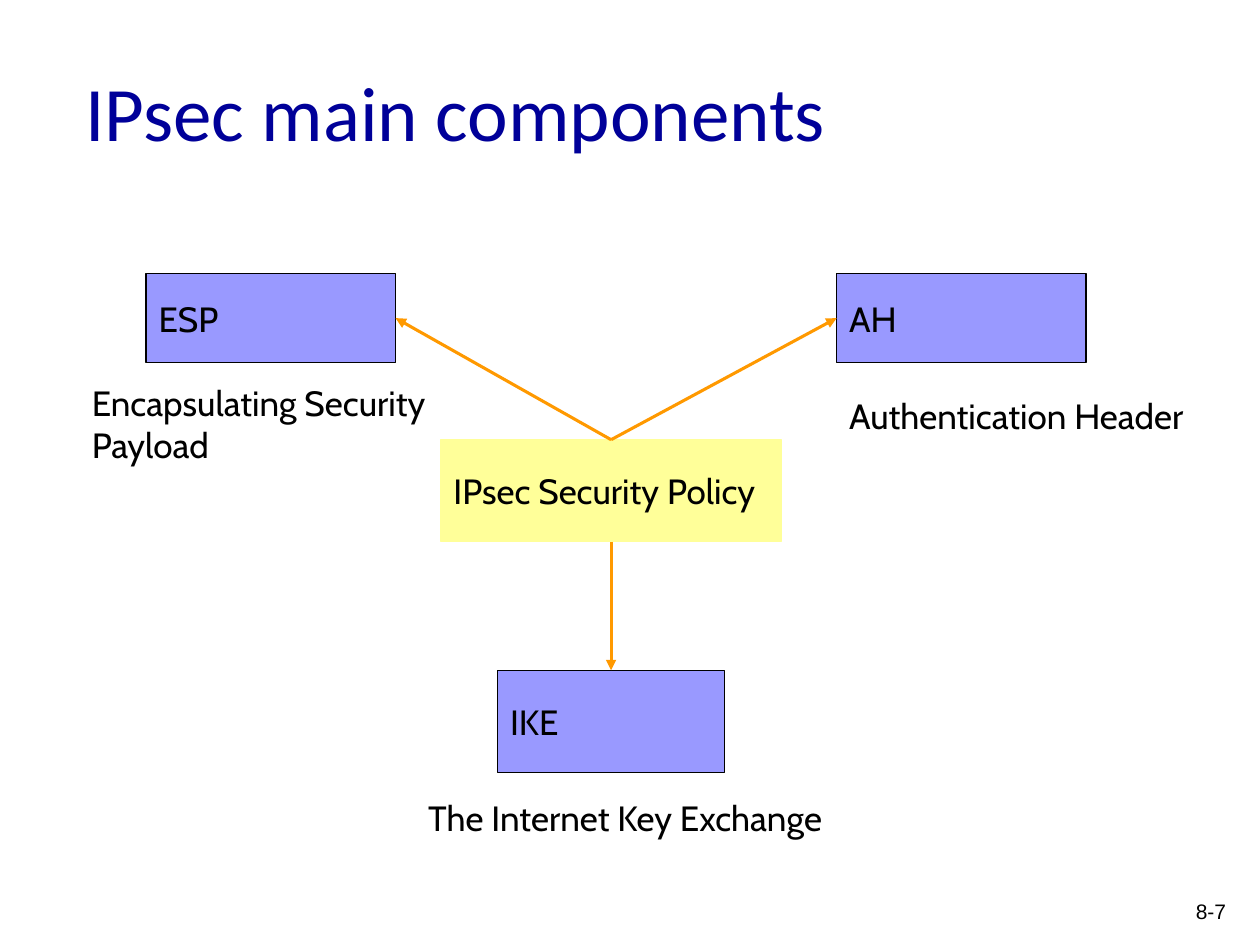
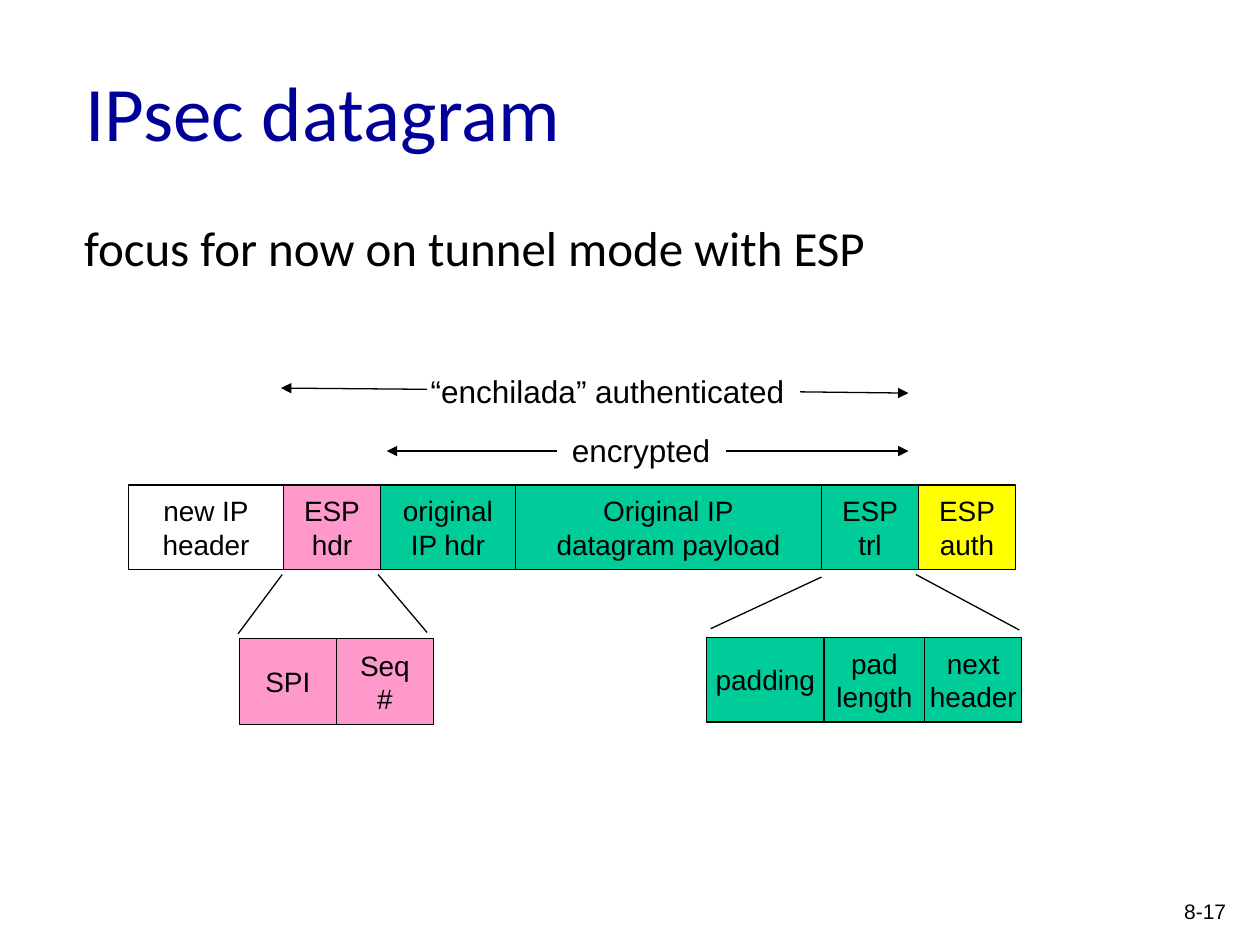
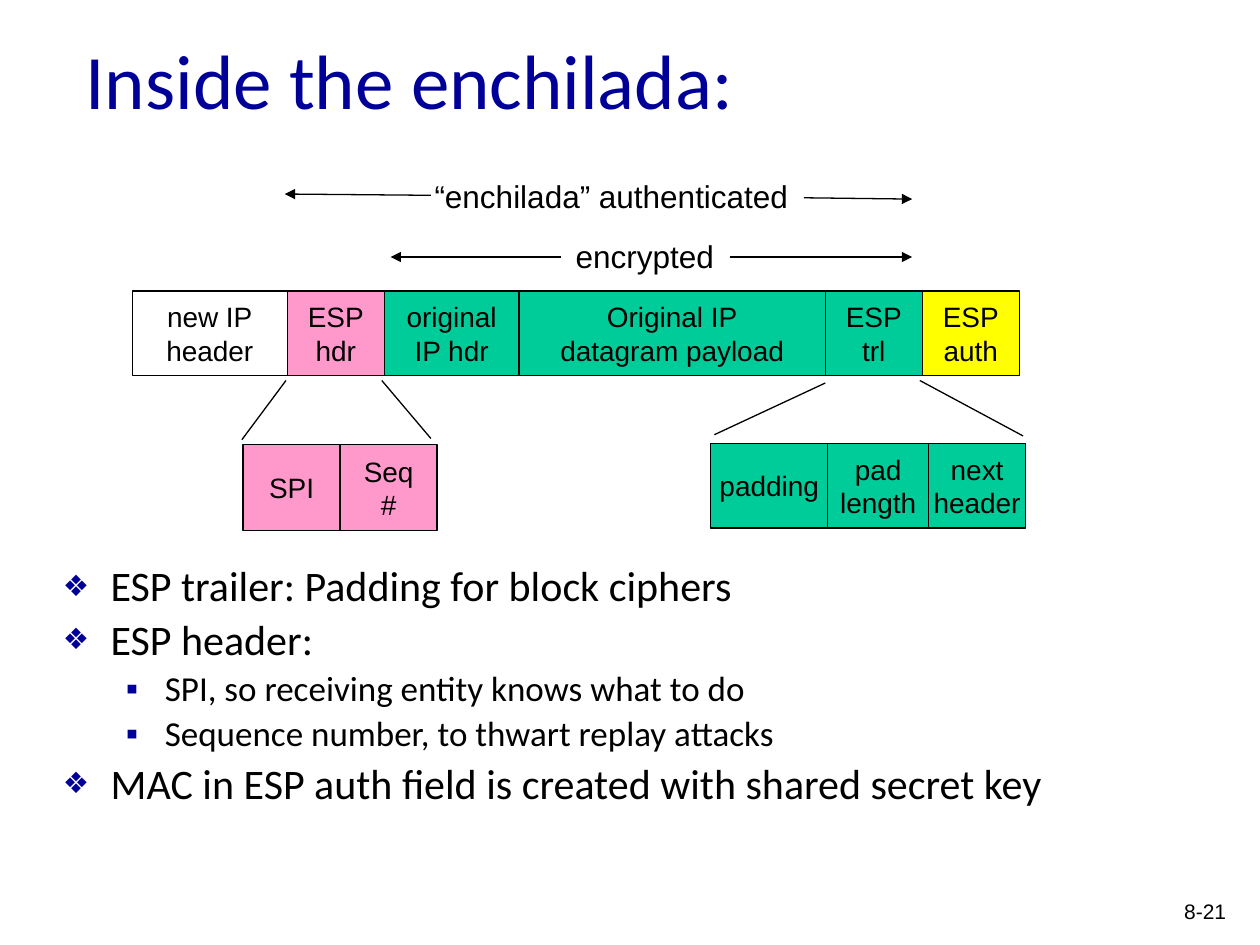
from lxml import etree
from pptx import Presentation
from pptx.dml.color import RGBColor
from pptx.enum.shapes import MSO_CONNECTOR, MSO_SHAPE
from pptx.enum.text import MSO_ANCHOR, MSO_AUTO_SIZE, PP_ALIGN
from pptx.oxml.ns import qn
from pptx.util import Inches, Pt

# Shared style
BLACK = RGBColor(0x00, 0x00, 0x00)
NAVY = RGBColor(0x00, 0x00, 0x99)
LAVENDER = RGBColor(0x99, 0x99, 0xFF)
CREAM = RGBColor(0xFF, 0xFF, 0x99)
ORANGE = RGBColor(0xFF, 0x99, 0x00)
PINK = RGBColor(0xFF, 0x99, 0xCC)
GREEN = RGBColor(0x00, 0xCC, 0x99)
YELLOW = RGBColor(0xFF, 0xFF, 0x00)
TITLE_FONT, DIAGRAM_FONT, COMPONENT_FONT = "Calibri", "Arial", "Cabin"
TITLE_ONLY = 5

# Components: text, (left, top, width, height)
POLICY = ("IPsec Security Policy", (3.5, 3.49, 2.7, 0.81))
COMPONENTS = {
    "ESP": (1.16, 2.17, 1.98, 0.71),
    "AH": (6.64, 2.17, 1.98, 0.71),
    "IKE": (3.95, 5.32, 1.8, 0.81),
}
COMPONENT_NAMES = [
    ("Encapsulating Security\nPayload", (0.63, 2.98, 3.22, 0.94)),
    ("Authentication Header", (6.64, 3.08, 3.19, 0.53)),
    ("The Internet Key Exchange", (3.3, 6.27, 3.84, 0.53)),
]

# Datagram, measured from the top left corner of its main row
# Rows: left, top, height, then (text, width, fill) for each field
FIELD_ROWS = [
    (0, 0, 0.67, [
        ("new IP\nheader", 1.23, None), ("ESP\nhdr", 0.77, PINK),
        ("original\nIP hdr", 1.07, GREEN),
        ("Original IP\ndatagram payload", 2.43, GREEN),
        ("ESP\ntrl", 0.77, GREEN), ("ESP\nauth", 0.77, YELLOW)]),
    (4.59, 1.21, 0.67, [
        ("padding", 0.93, GREEN), ("pad\nlength", 0.8, GREEN),
        ("next\nheader", 0.77, GREEN)]),
    (0.88, 1.22, 0.68, [("SPI", 0.77, PINK), ("Seq\n#", 0.77, PINK)]),
]
SPAN_LABELS = [
    ("encrypted", (3.42, -0.48, 1.3, 0.4)),
    ("“enchilada” authenticated", (2.3, -0.95, 3.01, 0.4)),
]
SPAN_ARROWS = [
    ((4.74, -0.27), (6.19, -0.27)), ((3.4, -0.27), (2.05, -0.27)),
    ((5.33, -0.74), (6.19, -0.73)), ((2.37, -0.76), (1.21, -0.77)),
]
ZOOM_LINES = [
    ((4.62, 1.14), (5.5, 0.73)), ((7.07, 1.15), (6.25, 0.71)),
    ((0.87, 1.18), (1.22, 0.71)), ((1.98, 0.71), (2.37, 1.17)),
]

# Body text: (level, text); level None has no bullet
FOCUS = [(None, "focus for now on tunnel mode with ESP")]
ENCHILADA = [
    (0, "ESP trailer: Padding for block ciphers"),
    (0, "ESP header:"),
    (1, "SPI, so receiving entity knows what to do"),
    (1, "Sequence number, to thwart replay attacks"),
    (0, "MAC in ESP auth field is created with shared secret key"),
]
# Level: size, line spacing, left margin, hanging indent, bullet, bullet percent
LEVELS = {
    None: (28, 1.0, 0.38, 0.38, None, None),
    0: (24, 0.9, 0.38, 0.38, "❖", 70),
    1: (20, 0.9, 0.81, 0.31, "▪", 100),
}


def inches(lengths):
    return [Inches(length) for length in lengths]


def shifted(origin, place):
    """Move a point or a box by the origin."""
    return (origin[0] + place[0], origin[1] + place[1], *place[2:])


def add_run(paragraph, text, font, size, color=BLACK):
    run = paragraph.add_run()
    run.text = text
    run.font.name, run.font.size, run.font.color.rgb = font, Pt(size), color


def write(frame, text, font, size, color=BLACK, align=PP_ALIGN.LEFT,
          anchor=MSO_ANCHOR.TOP, wrap=False):
    frame.auto_size = MSO_AUTO_SIZE.NONE
    frame.word_wrap, frame.vertical_anchor = wrap, anchor
    for index, line in enumerate(text.split("\n")):
        paragraph = frame.add_paragraph() if index else frame.paragraphs[0]
        paragraph.alignment = align
        add_run(paragraph, line, font, size, color)


def add_label(slide, text, box, font, size, **style):
    label = slide.shapes.add_textbox(*inches(box))
    write(label.text_frame, text, font, size, **style)


def add_box(slide, text, box, fill, font, size, line=BLACK, align=PP_ALIGN.LEFT):
    shape = slide.shapes.add_shape(MSO_SHAPE.RECTANGLE, *inches(box))
    shape.shadow.inherit = False
    if fill is None:
        shape.fill.background()
    else:
        shape.fill.solid()
        shape.fill.fore_color.rgb = fill
    shape.line.color.rgb, shape.line.width = line, Pt(0.75)
    write(shape.text_frame, text, font, size, align=align, anchor=MSO_ANCHOR.MIDDLE)


def add_line(slide, start, end, color=BLACK, width=0.75, arrow=False):
    connector = slide.shapes.add_connector(
        MSO_CONNECTOR.STRAIGHT, *inches(start), *inches(end))
    connector.line.color.rgb, connector.line.width = color, Pt(width)
    if arrow:
        etree.SubElement(connector.line._get_or_add_ln(), qn("a:tailEnd"), type="triangle")
    etree.SubElement(connector._element.spPr, qn("a:effectLst"))


def add_body(slide, box, entries):
    frame = slide.shapes.add_textbox(*inches(box)).text_frame
    frame.word_wrap = True
    for index, (level, text) in enumerate(entries):
        size, spacing, margin, hanging, bullet, percent = LEVELS[level]
        paragraph = frame.add_paragraph() if index else frame.paragraphs[0]
        paragraph.level = level or 0
        paragraph.line_spacing, paragraph.space_before = spacing, Pt(size * 0.2)
        add_run(paragraph, text, TITLE_FONT, size)
        properties = paragraph._p.get_or_add_pPr()
        properties.set("marL", str(Inches(margin)))
        properties.set("indent", str(-Inches(hanging)))
        if bullet:
            color = etree.SubElement(properties, qn("a:buClr"))
            etree.SubElement(color, qn("a:srgbClr"), val=str(NAVY))
            etree.SubElement(properties, qn("a:buSzPct"), val=str(percent * 1000))
            etree.SubElement(properties, qn("a:buFont"), typeface=DIAGRAM_FONT)
            etree.SubElement(properties, qn("a:buChar"), char=bullet)


def add_slide(presentation, title, number, title_top=0.25):
    slide = presentation.slides.add_slide(presentation.slide_layouts[TITLE_ONLY])
    heading = slide.shapes.title
    heading.left, heading.top, heading.width, heading.height = inches(
        (0.58, title_top, 8.5, 1.25))
    write(heading.text_frame, title, TITLE_FONT, 44, NAVY,
          anchor=MSO_ANCHOR.MIDDLE, wrap=True)
    add_label(slide, number, (9.09, 7.08, 0.74, 0.33), DIAGRAM_FONT, 12,
              align=PP_ALIGN.RIGHT, wrap=True)
    return slide


def add_components(slide):
    for name, box in COMPONENTS.items():
        add_box(slide, name, box, LAVENDER, COMPONENT_FONT, 20)
    text, policy_box = POLICY
    add_box(slide, text, policy_box, CREAM, COMPONENT_FONT, 20, line=CREAM)

    # Arrows from the policy to the facing edge of each component
    left, top, width, height = policy_box
    center = left + width / 2
    for box_left, box_top, box_width, box_height in COMPONENTS.values():
        middle = box_top + box_height / 2
        if box_top > top:
            start, end = (center, top + height), (center, box_top)
        elif box_left < center:
            start, end = (center, top), (box_left + box_width, middle)
        else:
            start, end = (center, top), (box_left, middle)
        add_line(slide, start, end, ORANGE, 1.75, arrow=True)

    for text, box in COMPONENT_NAMES:
        add_label(slide, text, box, COMPONENT_FONT, 20)


def add_datagram(slide, origin):
    for left, top, height, fields in FIELD_ROWS:
        for text, width, fill in fields:
            box = shifted(origin, (left, top, width, height))
            add_box(slide, text, box, fill, DIAGRAM_FONT, 16, align=PP_ALIGN.CENTER)
            left += width
    for text, box in SPAN_LABELS:
        add_label(slide, text, shifted(origin, box), DIAGRAM_FONT, 18)
    for lines, arrow in ((SPAN_ARROWS, True), (ZOOM_LINES, False)):
        for start, end in lines:
            add_line(slide, shifted(origin, start), shifted(origin, end), arrow=arrow)


def main():
    presentation = Presentation()
    presentation.slide_width, presentation.slide_height = Inches(10), Inches(7.5)

    # Main components
    add_components(add_slide(presentation, "IPsec main components", "8-7"))

    # Datagram
    slide = add_slide(presentation, "IPsec datagram", "8-17")
    add_body(slide, (0.57, 1.68, 8.5, 5.08), FOCUS)
    add_datagram(slide, (1.02, 3.85))

    # Datagram with explanation
    slide = add_slide(presentation, "Inside the enchilada:", "8-21", title_top=0)
    add_body(slide, (0.4, 4.44, 8.5, 2.59), ENCHILADA)
    add_datagram(slide, (1.05, 2.31))

    presentation.save("out.pptx")


if __name__ == "__main__":
    main()
